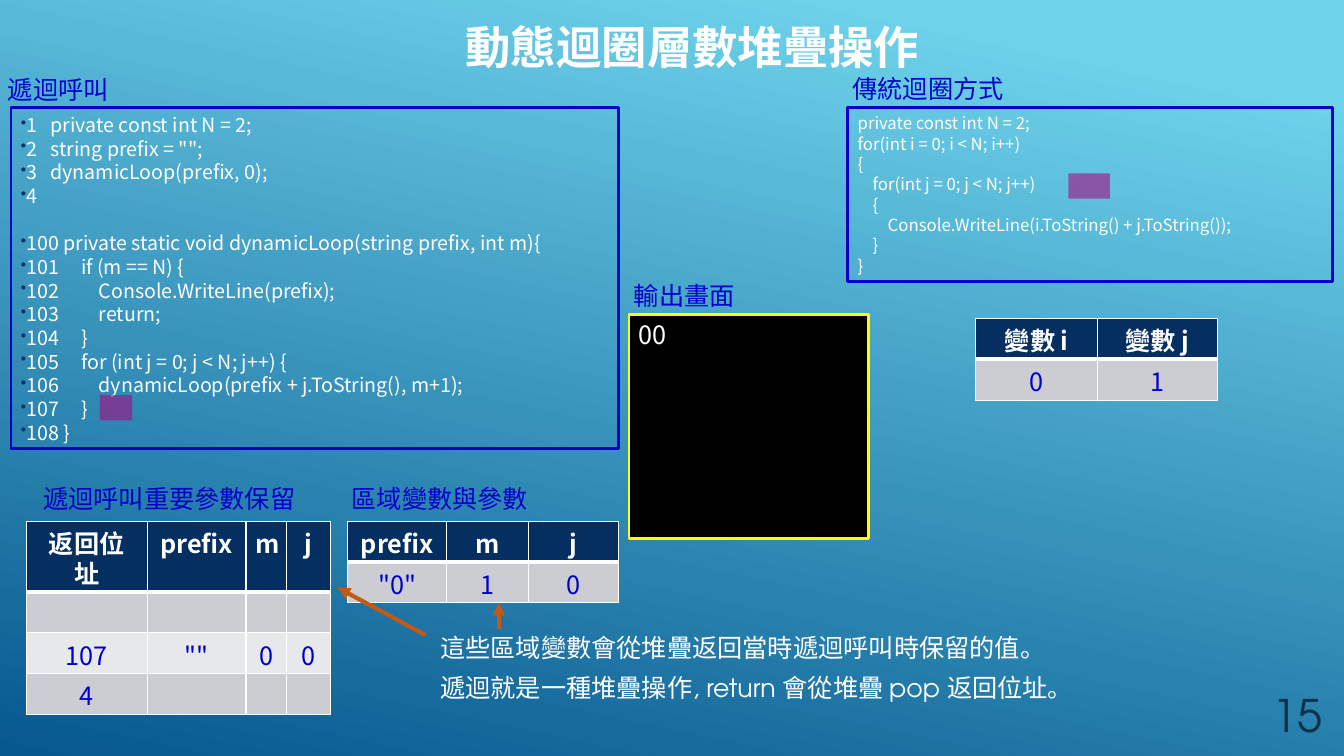
"""Build a slide that compares recursion and nested loops on a 160 by 90 grid."""
import pptx
import pptx.util
import pptx.dml.color
import pptx.enum.shapes
import pptx.enum.text
import pptx.oxml.ns
import lxml.etree

COLS, ROWS = 160, 90
WIDTH, HEIGHT = pptx.util.Inches(13.33), pptx.util.Inches(7.5)
SANS, GEO = "Noto Sans CJK SC", "TeX Gyre Adventor"
BLUE, WHITE, NAVY, GRAY = "0000CC", "FFFFFF", "052F61", "CCCDD2"
ALIGN = pptx.enum.text.PP_ALIGN
ANCHOR = pptx.enum.text.MSO_ANCHOR

CALLS = """1   private const int N = 2;
2   string prefix = "";
3   dynamicLoop(prefix, 0);
4

100 private static void dynamicLoop(string prefix, int m){
101     if (m == N) {
102         Console.WriteLine(prefix);
103         return;
104     }
105     for (int j = 0; j < N; j++) {
106         dynamicLoop(prefix + j.ToString(), m+1);
107     }
108 }"""
LOOPS = """private const int N = 2;
for(int i = 0; i < N; i++)
{
    for(int j = 0; j < N; j++)
    {
        Console.WriteLine(i.ToString() + j.ToString());
    }
}"""
LABELS = [
    ("輸出畫面", 74.28, 32.76, 18.96),
    ("遞迴呼叫", -0.24, 8.28, 15.12),
    ("傳統迴圈方式", 100.32, 8.16, 21.36),
    ("遞迴呼叫重要參數保留", 3.96, 56.88, 34.68),
    ("區域變數與參數", 40.68, 56.88, 34.68),
]
NOTES = [
    ("這些區域變數會從堆疊返回當時遞迴呼叫時保留的值。", 74.64),
    ("遞迴就是一種堆疊操作, return 會從堆疊 pop 返回位址。", 79.44),
]
TABLES = [
    (3.12, 62.04, [14.4, 11.76, 4.8, 5.28],
     [["返回位址", "prefix", "m", "j"], [""] * 4,
      ["107", '""', "0", "0"], ["4", "", "", ""]]),
    (116.16, 37.92, [14.52, 14.28], [["變數 i", "變數 j"], ["0", "1"]]),
    (41.4, 62.04, [11.76, 9.72, 10.8], [["prefix", "m", "j"], ['"0"', "1", "0"]]),
]


def across(cols):
    """Turn grid columns into a length."""
    return round(WIDTH * cols / COLS)


def down(rows):
    """Turn grid rows into a length."""
    return round(HEIGHT * rows / ROWS)


def place(x, y, w, h):
    """Turn a grid box into slide lengths."""
    return across(x), down(y), across(w), down(h)


def hue(code):
    """Turn a hex string into a colour."""
    return pptx.dml.color.RGBColor.from_string(code)


def add(parent, tag, **attrs):
    """Append a drawing element with attributes."""
    node = lxml.etree.SubElement(parent, pptx.oxml.ns.qn("a:" + tag))
    for key, value in attrs.items():
        node.set(key, str(value))
    return node


def write(frame, text, size=18, color=BLUE, font=SANS, bold=False,
          align=ALIGN.LEFT, space=None, dots=False):
    """Fill a text frame, one paragraph per line."""
    for row, line in enumerate(text.split("\n")):
        para = frame.add_paragraph() if row else frame.paragraphs[0]
        para.alignment = align
        if space:
            para.line_spacing = space
        if not line:
            continue
        if dots:
            props = para._p.get_or_add_pPr()
            add(add(props, "buClr"), "srgbClr", val=NAVY)
            add(props, "buSzPct", val=80000)
            add(props, "buChar", char="•")
        run = para.add_run()
        run.text = line
        run.font.size = pptx.util.Pt(size)
        run.font.bold = bold
        run.font.color.rgb = hue(color)
        run.font.name = font
        add(run._r.get_or_add_rPr(), "ea", typeface=SANS)


def tight(size):
    """Give the fixed line height for a text size."""
    return pptx.util.Pt(round(size * 1.205, 1))


def label(slide, text, box, anchor=ANCHOR.TOP, wrap=True, **style):
    """Add a plain text box."""
    frame = slide.shapes.add_textbox(*place(*box)).text_frame
    frame.word_wrap = wrap
    frame.vertical_anchor = anchor
    write(frame, text, **style)


def panel(slide, box, fill=None, line=None, alpha=None):
    """Add a rectangle and return its text frame."""
    kind = pptx.enum.shapes.MSO_SHAPE.RECTANGLE
    shape = slide.shapes.add_shape(kind, *place(*box))
    shape.shadow.inherit = False
    if fill:
        shape.fill.solid()
        shape.fill.fore_color.rgb = hue(fill)
    else:
        shape.fill.background()
    if alpha:
        tint = shape._element.spPr.find(".//" + pptx.oxml.ns.qn("a:srgbClr"))
        add(tint, "alpha", val=alpha * 1000)
    if line:
        shape.line.color.rgb = hue(line)
        shape.line.width = pptx.util.Pt(2)
    else:
        shape.line.fill.background()
    shape.text_frame.word_wrap = True
    shape.text_frame.vertical_anchor = ANCHOR.TOP
    return shape.text_frame


def edge(cell, row):
    """Draw white cell borders, thick under the header."""
    props = cell._tc.get_or_add_tcPr()
    for spot, side in enumerate("LRTB"):
        thick = (row, side) in ((0, "B"), (1, "T"))
        line = add(props, "ln" + side, w=pptx.util.Pt(3 if thick else 1))
        add(add(line, "solidFill"), "srgbClr", val=WHITE)
        props.insert(spot, line)


def grid(slide, x, y, widths, data):
    """Add a table with a navy header and banded rows."""
    high = 4.86
    box = place(x, y, sum(widths), high * len(data))
    table = slide.shapes.add_table(len(data), len(widths), *box).table
    for col, width in zip(table.columns, widths):
        col.width = across(width)
    for row, line in enumerate(data):
        table.rows[row].height = down(high)
        for col, text in enumerate(line):
            cell = table.cell(row, col)
            cell.margin_top = pptx.util.Inches(0.09)
            cell.margin_bottom = pptx.util.Inches(0.01)
            cell.fill.solid()
            shade = NAVY if row == 0 else GRAY if row % 2 else "E7E8EA"
            cell.fill.fore_color.rgb = hue(shade)
            edge(cell, row)
            write(cell.text_frame, text, color=BLUE if row else WHITE,
                  bold=row == 0, align=ALIGN.CENTER, space=tight(18))


def arrow(slide, x, y, to_x, to_y):
    """Add an orange arrow between two grid points."""
    kind = pptx.enum.shapes.MSO_CONNECTOR.STRAIGHT
    line = slide.shapes.add_connector(kind, *place(x, y, to_x, to_y))
    line.line.color.rgb = hue("C15A16")
    line.line.width = pptx.util.Pt(3)
    add(line.line._get_or_add_ln(), "tailEnd", type="triangle")
    add(line._element.spPr, "effectLst")


def paint(slide):
    """Fill the background with a blue gradient."""
    fill = slide.background.fill
    fill.gradient()
    fill.gradient_angle = 258
    for stop, (spot, code) in zip(fill.gradient_stops, [(0.1, "6ED2EB"), (1, "06588E")]):
        stop.position = spot
        stop.color.rgb = hue(code)


def main():
    """Build and save the slide."""
    deck = pptx.Presentation()
    deck.slide_width, deck.slide_height = WIDTH, HEIGHT
    slide = deck.slides.add_slide(deck.slide_layouts[6])
    paint(slide)
    label(slide, "15", (143.64, 80.16, 15, 8.76), anchor=ANCHOR.BOTTOM,
          size=32, color="0A304A", font=GEO, align=ALIGN.RIGHT)
    label(slide, "動態迴圈層數堆疊操作", (52.8, 1.68, 59.28, 7.68), anchor=ANCHOR.BOTTOM,
          size=32.4, color=WHITE, font=GEO, bold=True, align=ALIGN.CENTER, space=0.85)
    for text, x, y, w in LABELS:
        label(slide, text, (x, y, w, 4.56), space=tight(18))
    write(panel(slide, (1.32, 12.84, 72.36, 40.56), line=BLUE), CALLS,
          size=14, color=WHITE, space=tight(14), dots=True)
    write(panel(slide, (74.88, 37.44, 28.56, 26.64), fill="000000", line="FFFF00"),
          "00", color=WHITE, space=tight(18))
    write(panel(slide, (100.92, 12.84, 57.72, 20.64), line=BLUE), LOOPS,
          size=12, color=WHITE, space=tight(12))
    for box in [(11.88, 47.04, 3.84, 3), (127.2, 20.64, 4.92, 3)]:
        panel(slide, box, fill="A50E82", alpha=60)
    for table in TABLES:
        grid(slide, *table)
    for text, y in NOTES:
        label(slide, text, (51.24, y, 78.84, 4.8), wrap=False, color=WHITE, font=GEO)
    arrow(slide, 59.4, 74.88, 59.4, 71.76)
    arrow(slide, 50.64, 75.6, 40.2, 69.96)
    deck.save("out.pptx")


if __name__ == "__main__":
    main()
